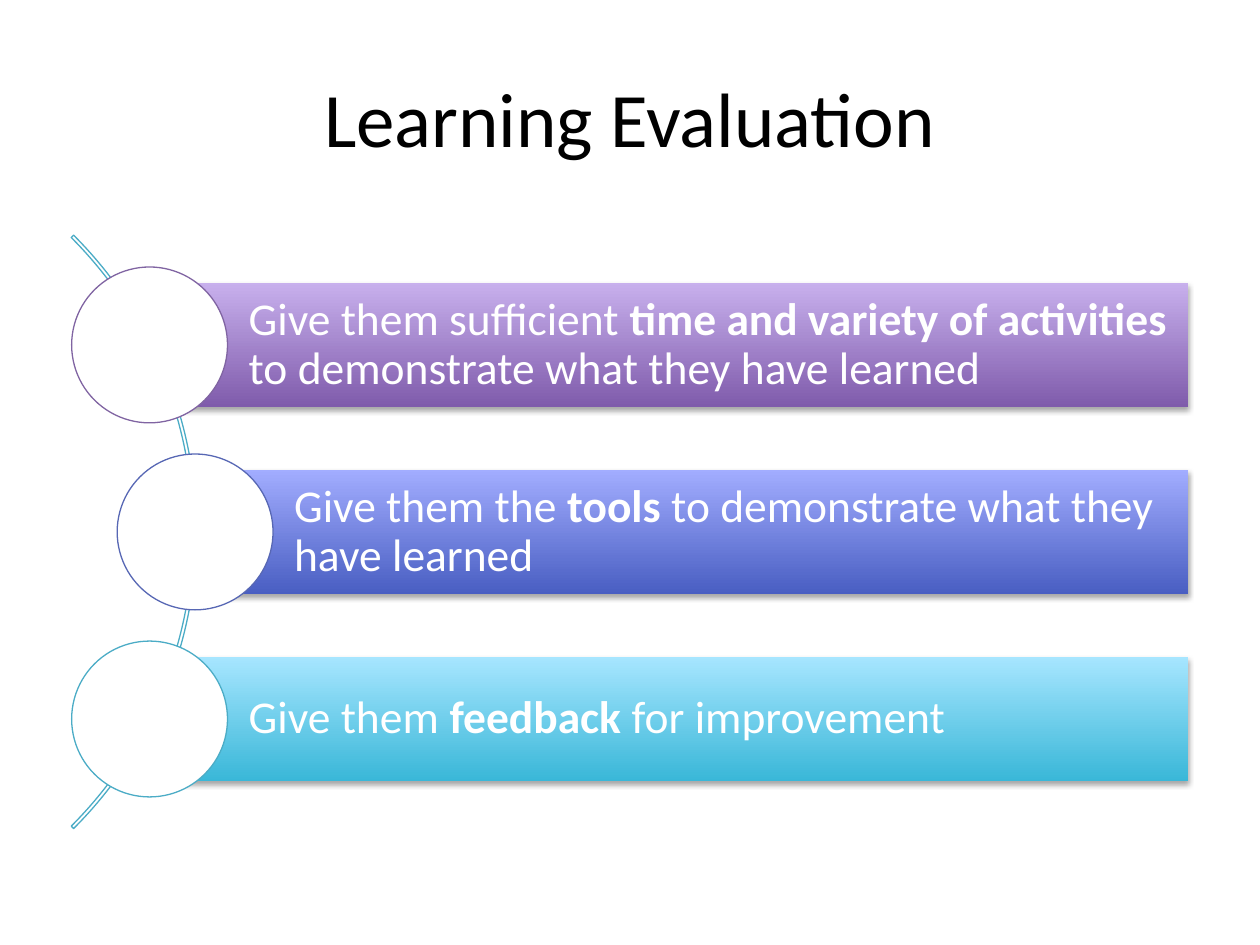
"""Build the Learning Evaluation slide: three banners along a curved arc."""
from dataclasses import dataclass

from lxml import etree
from pptx import Presentation
from pptx import util as u
from pptx.dml.color import RGBColor
from pptx.enum import shapes, text
from pptx.oxml import ns

FONT = "Calibri"
BAR_RIGHT = 679
BAR_TOP = 161.5
BAR_HEIGHT = 71.25
BAR_PITCH = 1.5 * BAR_HEIGHT
CIRCLE_SIZE = 1.25 * BAR_HEIGHT


@dataclass(frozen=True)
class Banner:
    """One row: a gradient bar with a circle over its left end."""
    left: float
    dark: str
    light: str
    outline: str
    before: str
    strong: str
    after: str


BANNERS = [
    Banner(85.5, "7F5BAB", "C8B0ED", "8064A2", "Give them sufficient ",
           "time and variety of activities", " to demonstrate what they have learned"),
    Banner(111.5, "495EC2", "A2ADFF", "5767B4", "Give them the ",
           "tools", " to demonstrate what they have learned"),
    Banner(85.5, "39B7D8", "A7E6FF", "4BACC6", "Give them ",
           "feedback", " for improvement"),
]


def set_color(color_format, value: str) -> None:
    """Apply a hex colour to a colour format."""
    color_format.rgb = RGBColor.from_string(value)


def add_run(paragraph, content: str, size: float, color: str, bold: bool = False) -> None:
    """Append one formatted run to a paragraph."""
    run = paragraph.add_run()
    run.text = content
    run.font.name = FONT
    run.font.size = u.Pt(size)
    run.font.bold = bold
    set_color(run.font.color, color)


def add_outlined(slide, kind, left: float, top: float, size: float, color: str):
    """Add a square-framed shape with a thin outline."""
    shape = slide.shapes.add_shape(kind, u.Pt(left), u.Pt(top), u.Pt(size), u.Pt(size))
    shape.shadow.inherit = False
    shape.line.width = u.Pt(0.75)
    set_color(shape.line.color, color)
    return shape


def add_soft_shadow(shape) -> None:
    """Give a shape a soft black shadow falling straight down."""
    shape.shadow.inherit = False
    effects = shape._element.spPr.find(ns.qn("a:effectLst"))
    shadow = etree.SubElement(effects, ns.qn("a:outerShdw"), blurRad=str(u.Pt(3.1)),
                              dist=str(u.Pt(1.8)), dir="5400000", rotWithShape="0")
    color = etree.SubElement(shadow, ns.qn("a:srgbClr"), val="000000")
    etree.SubElement(color, ns.qn("a:alpha"), val="35000")


def add_title(slide, content: str) -> None:
    """Add the centred slide title."""
    box = slide.shapes.add_textbox(u.Pt(36), u.Pt(21.6), u.Pt(648), u.Pt(90))
    frame = box.text_frame
    frame.word_wrap = True
    frame.vertical_anchor = text.MSO_ANCHOR.MIDDLE
    paragraph = frame.paragraphs[0]
    paragraph.alignment = text.PP_ALIGN.CENTER
    add_run(paragraph, content, 44, "000000")


def add_arc(slide) -> None:
    """Add the thin arc that runs behind the circles."""
    arc = add_outlined(slide, shapes.MSO_SHAPE.BLOCK_ARC, -367.2, 64.2, 479.5, "4BACC6")
    arc.fill.background()
    for index, value in enumerate((189, 27, 0.004)):
        arc.adjustments[index] = value


def add_bar(slide, banner: Banner, top: float) -> None:
    """Add the gradient bar and its sentence."""
    bar = slide.shapes.add_shape(shapes.MSO_SHAPE.RECTANGLE, u.Pt(banner.left), u.Pt(top),
                                 u.Pt(BAR_RIGHT - banner.left), u.Pt(BAR_HEIGHT))
    add_soft_shadow(bar)
    bar.line.fill.background()
    bar.fill.gradient()
    bar.fill.gradient_angle = 90
    for stop, color in zip(bar.fill.gradient_stops, (banner.dark, banner.light)):
        set_color(stop.color, color)
    frame = bar.text_frame
    frame.word_wrap = True
    frame.vertical_anchor = text.MSO_ANCHOR.MIDDLE
    frame.margin_left = u.Pt(56.6)
    frame.margin_top = frame.margin_right = frame.margin_bottom = u.Pt(5)
    paragraph = frame.paragraphs[0]
    paragraph.alignment = text.PP_ALIGN.LEFT
    paragraph.line_spacing = 0.9
    add_run(paragraph, banner.before, 26, "FFFFFF")
    add_run(paragraph, banner.strong, 26, "FFFFFF", bold=True)
    add_run(paragraph, banner.after, 26, "FFFFFF")


def add_banner(slide, banner: Banner, top: float) -> None:
    """Add a bar with its circle centred on the left end."""
    add_bar(slide, banner, top)
    circle = add_outlined(slide, shapes.MSO_SHAPE.OVAL, banner.left - CIRCLE_SIZE / 2,
                          top - (CIRCLE_SIZE - BAR_HEIGHT) / 2, CIRCLE_SIZE, banner.outline)
    circle.fill.solid()
    set_color(circle.fill.fore_color, "FFFFFF")


def main() -> None:
    """Create and save the presentation."""
    presentation = Presentation()
    presentation.slide_width = u.Pt(720)
    presentation.slide_height = u.Pt(540)
    slide = presentation.slides.add_slide(presentation.slide_layouts[6])
    add_title(slide, "Learning Evaluation")
    add_arc(slide)
    for row, banner in enumerate(BANNERS):
        add_banner(slide, banner, BAR_TOP + row * BAR_PITCH)
    presentation.save("out.pptx")


if __name__ == "__main__":
    main()
